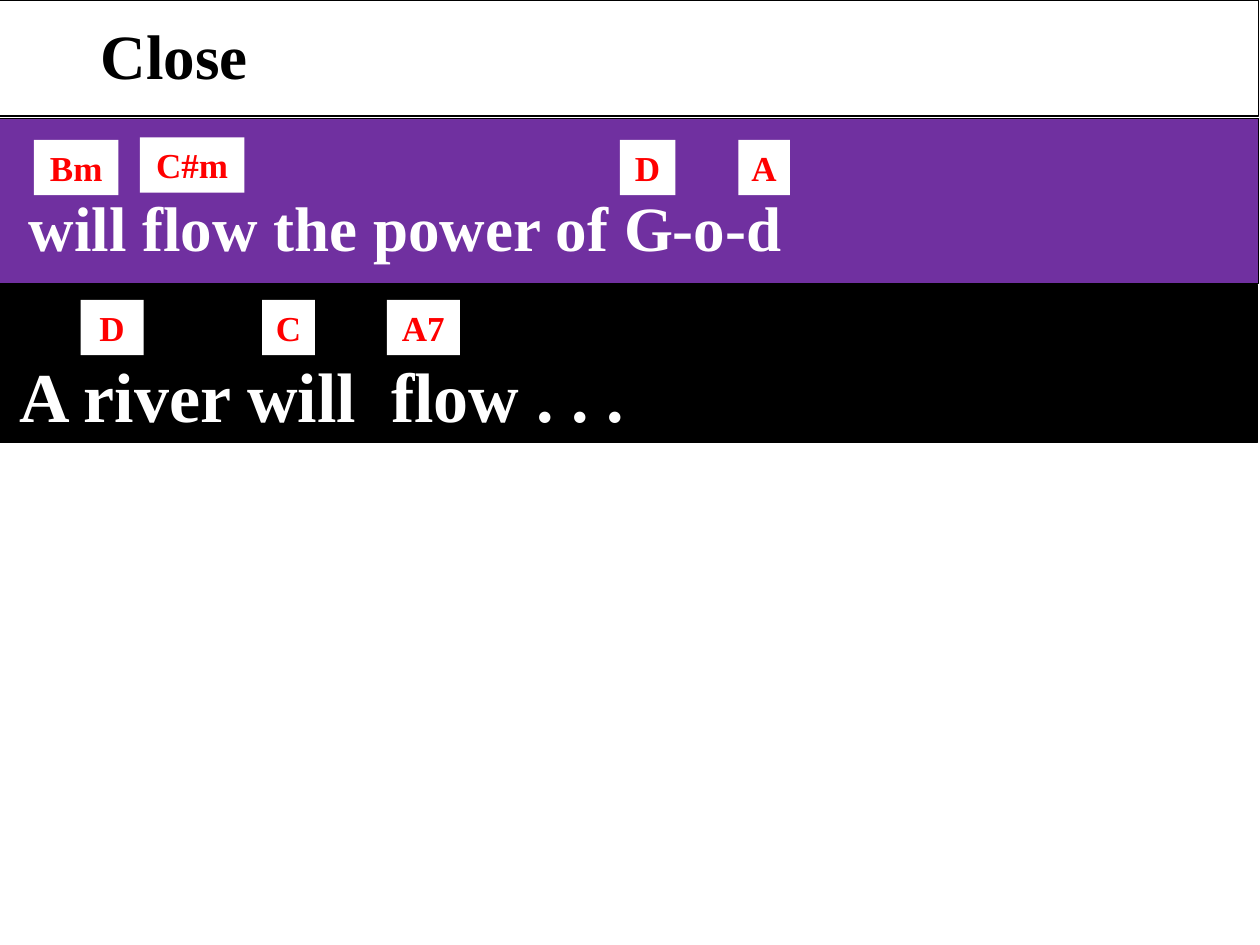
"""Build a song slide with a heading, two lyric bands and chord labels."""
from pptx import Presentation
from pptx.dml.color import RGBColor as RGB
from pptx.enum.shapes import MSO_SHAPE as SHAPE
from pptx.enum.text import MSO_ANCHOR as ANCHOR, PP_ALIGN as ALIGN
from pptx.util import Inches, Pt

COLORS = {"white": "FFFFFF", "black": "000000", "purple": "7030A0", "red": "FF0000"}
WIDTH, HEIGHT = 10, 7.5
CHORD_HEIGHT = 0.44

prs = Presentation()
prs.slide_width, prs.slide_height = Inches(WIDTH), Inches(HEIGHT)
s = prs.slides.add_slide(prs.slide_layouts[6])


def add_box(left, top, width, height, fill, line=None):
    sp = s.shapes.add_shape(SHAPE.RECTANGLE, *map(Inches, (left, top, width, height)))
    sp.shadow.inherit = False
    sp.fill.solid()
    sp.fill.fore_color.rgb = RGB.from_string(COLORS[fill])
    if line:
        sp.line.color.rgb = RGB.from_string(COLORS[line])
        sp.line.width = Pt(0.75)
    else:
        sp.line.fill.background()
    return sp


def set_text(sp, text, size, color, align, left=0.1, right=0.1):
    tf = sp.text_frame
    tf.word_wrap = True
    tf.vertical_anchor = ANCHOR.TOP
    tf.margin_left, tf.margin_right = Inches(left), Inches(right)
    p = tf.paragraphs[0]
    p.text, p.alignment = text, align
    p.font.name, p.font.size, p.font.bold = "Times New Roman", Pt(size), True
    p.font.color.rgb = RGB.from_string(COLORS[color])


bands = [
    (-0.01, 0, 0.92, "white"),
    (-0.01, 0.94, 1.31, "purple"),
    (-0.02, 2.26, 1.25, "black"),
]
for left, top, height, fill in bands:
    add_box(left, top, WIDTH, height, fill, "black")

heading = add_box(0.02, 0.08, 2.98, 0.71, "white")
set_text(heading, "Close", 36, "black", ALIGN.CENTER, right=0.35)

chords = [
    ("Bm", 0.27, 1.11, 0.67),
    ("C#m", 1.11, 1.09, 0.83),
    ("D", 4.92, 1.11, 0.44),
    ("A", 5.86, 1.11, 0.41),
    ("D", 0.64, 2.38, 0.5),
    ("C", 2.08, 2.38, 0.42),
    ("A7", 3.07, 2.38, 0.58),
]
for chord, left, top, width in chords:
    sp = add_box(left, top, width, CHORD_HEIGHT, "white")
    set_text(sp, chord, 20, "red", ALIGN.CENTER, left=0.05, right=0.05)

lyrics = [
    ("will flow the power of G-o-d", 0.01, 1.45, 0.71, 36, 0.22),
    ("A river will  flow . . .", 0.06, 2.75, 0.77, 40, 0.1),
]
for text, left, top, height, size, inset in lyrics:
    sp = s.shapes.add_textbox(*map(Inches, (left, top, WIDTH, height)))
    set_text(sp, text, size, "white", ALIGN.LEFT, left=inset)

prs.save("out.pptx")
